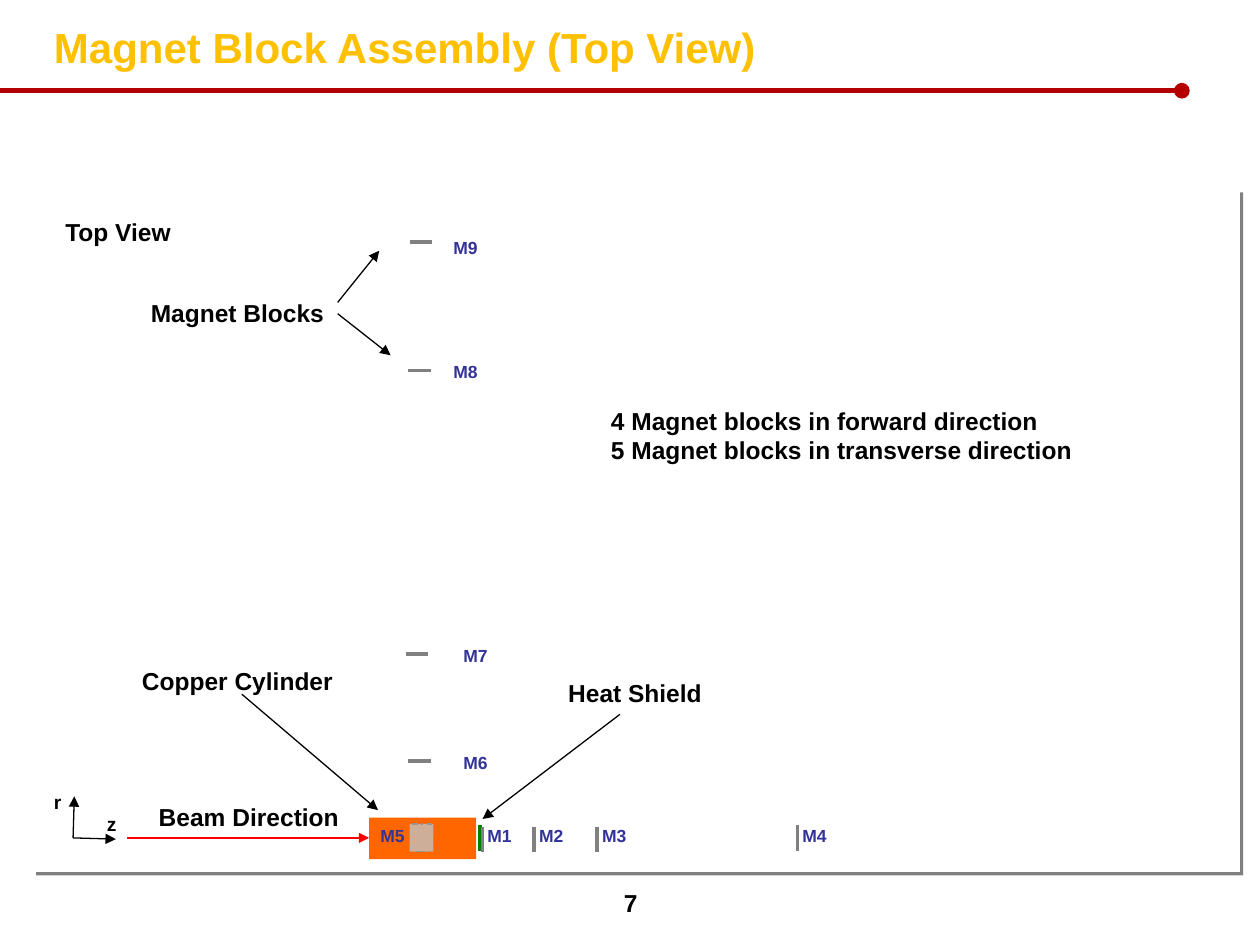
from dataclasses import dataclass

from lxml import etree
from pptx import Presentation
from pptx.dml.color import RGBColor
from pptx.enum.dml import MSO_LINE
from pptx.enum.shapes import MSO_CONNECTOR, MSO_SHAPE
from pptx.enum.text import MSO_ANCHOR, MSO_AUTO_SIZE, PP_ALIGN
from pptx.oxml.ns import qn
from pptx.util import Inches, Pt

STRAIGHT = MSO_CONNECTOR.STRAIGHT
RECTANGLE = MSO_SHAPE.RECTANGLE
DASH_DOT = MSO_LINE.DASH_DOT
MIDDLE, TOP = MSO_ANCHOR.MIDDLE, MSO_ANCHOR.TOP
FIT_SHAPE = MSO_AUTO_SIZE.SHAPE_TO_FIT_TEXT
LEFT, CENTER = PP_ALIGN.LEFT, PP_ALIGN.CENTER

FONT = "Arial"
COLORS = {
    "title": "FFC000", "rule": "B40000", "text": "000000", "label": "333399",
    "beam": "FF0000", "copper": "FF6600", "magnet": "808080",
    "shield": "008000", "block": "C0C0C0", "block_edge": "969696",
    "panel": "FFFFFF", "shadow": "808080",
}

# The page is a grid of 100 columns by 75 rows
COLUMNS, ROWS = 100, 75
CELL = Inches(10) // COLUMNS


@dataclass
class Box:
    """A region in grid units; its parts are placed from its corner."""
    left: float
    top: float
    width: float
    height: float

    def point(self, x, y):
        return round((self.left + x) * CELL), round((self.top + y) * CELL)

    def area(self, x, y, width, height):
        return (*self.point(x, y), round(width * CELL), round(height * CELL))


def color(name):
    return RGBColor.from_string(COLORS[name])


def add_line(page, box, start, end, name, weight=0.75, tail=None):
    line = page.shapes.add_connector(STRAIGHT, *box.point(*start), *box.point(*end))
    line.line.color.rgb = color(name)
    line.line.width = Pt(weight)
    if tail:
        etree.SubElement(line.line._get_or_add_ln(), qn("a:tailEnd"), type=tail)
    etree.SubElement(line._element.spPr, qn("a:effectLst"))


def add_text(page, box, place, lines, size=14, name="text", align=CENTER,
             wrap=True, anchor=TOP):
    frame = page.shapes.add_textbox(*box.area(*place)).text_frame
    frame.word_wrap = wrap
    frame.auto_size = FIT_SHAPE
    frame.vertical_anchor = anchor
    para = frame.paragraphs[0]
    para.alignment = align
    for number, line in enumerate(lines):
        if number:
            para.add_line_break()
        span = para.add_run()
        span.text = line
        span.font.name, span.font.size, span.font.bold = FONT, Pt(size), True
        span.font.color.rgb = color(name)


def add_rectangle(page, box, place, name):
    shape = page.shapes.add_shape(RECTANGLE, *box.area(*place))
    shape.shadow.inherit = False
    shape.fill.solid()
    shape.fill.fore_color.rgb = color(name)
    shape.line.fill.background()
    return shape


def add_header(page, box):
    add_line(page, box, (0, 7.2), (93.8, 7.2), "rule", 3, "oval")
    add_text(page, box, (3.3, 1.2, 58.2, 5), ["Magnet Block Assembly (Top View)"],
             24, "title", LEFT, wrap=False, anchor=MIDDLE)


def add_footer(page, box):
    add_text(page, box, (0, 0, box.width, box.height), ["7"])


def add_panel(page, box):
    panel = add_rectangle(page, box, (0, 0, box.width, box.height), "panel")
    effects = panel._element.spPr.find(qn("a:effectLst"))
    shadow = etree.SubElement(effects, qn("a:outerShdw"), dist=str(Pt(2.8)),
                              dir="2700000", algn="ctr", rotWithShape="0")
    etree.SubElement(shadow, qn("a:srgbClr"), val=COLORS["shadow"])


def add_target(page, box):
    """Copper cylinder with the M5 block inside, and the heat shield."""
    add_rectangle(page, box, (0, 0, 8.5, 3.3), "copper")
    block = add_rectangle(page, box, (3.2, 0.5, 1.9, 2.2), "block")
    tint = block._element.spPr.find(".//" + qn("a:srgbClr"))
    etree.SubElement(tint, qn("a:alpha"), val="80000")
    block.line.color.rgb = color("block_edge")
    block.line.width = Pt(0.75)
    block.line.dash_style = DASH_DOT
    add_line(page, box, (8.8, 0.6), (8.8, 2.6), "shield", 2)


def add_magnets(page, box):
    def add_label(text, x, y):
        add_text(page, box, (x, y, 3.9, 2.7), [text], 10, "label", LEFT, wrap=False)

    # Forward blocks: upright bars along the beam
    forward = [("M1", 35.7, 50.6), ("M2", 39.8, 50.6), ("M3", 44.8, 50.6),
               ("M4", 60.7, 50.5)]
    for text, x, y in forward:
        add_line(page, box, (x, y), (x, y + 2), "magnet", 2)
        add_label(text, x - 0.6, 50)

    # Transverse blocks: flat bars above the target
    transverse = [("M6", 29.8, 45.4, 33.2, 44.2), ("M7", 29.6, 36.9, 33.2, 35.7),
                  ("M8", 29.8, 14.4, 32.4, 13.2), ("M9", 29.9, 4.2, 32.4, 3.3)]
    for text, x, y, label_x, label_y in transverse:
        add_line(page, box, (x, y), (x + 1.8, y), "magnet", 2)
        add_label(text, label_x, label_y)
    add_label("M5", 26.6, 50)


def add_callouts(page, box):
    notes = [("Beam Direction", 8.4, 48.2, 17.5), ("Copper Cylinder", 7.5, 37.4, 17.5),
             ("Magnet Blocks", 7.5, 8.2, 17.5), ("Heat Shield", 40.7, 38.3, 14.2)]
    for text, x, y, width in notes:
        add_text(page, box, (x, y, width, 3.3), [text])
    add_text(page, box, (1.6, 1.7, 17.5, 3.3), ["Top View"], align=LEFT)
    add_text(page, box, (44.9, 16.7, 40.8, 5.7),
             ["4 Magnet blocks in forward direction",
              "5 Magnet blocks in transverse direction"], align=LEFT)

    arrows = [((16.6, 40.1), (27.4, 49.3)), ((24.2, 9.9), (28.4, 13.2)),
              ((24.2, 9), (27.5, 4.9)), ((46.6, 41.7), (35.7, 50))]
    for start, end in arrows:
        add_line(page, box, start, end, "text", tail="triangle")
    add_line(page, box, (7.5, 51.5), (26.7, 51.5), "beam", tail="triangle")


def add_axes(page, box):
    origin = (2.5, 4.3)
    axes = [("r", (2.6, 1), (0, 0)), ("z", (5.9, 4.4), (4.2, 1.8))]
    for text, tip, corner in axes:
        add_line(page, box, origin, tip, "text", tail="triangle")
        add_text(page, box, (*corner, 2.5, 2.8), [text], 11)


def main():
    deck = Presentation()
    deck.slide_width, deck.slide_height = COLUMNS * CELL, ROWS * CELL
    page = deck.slides.add_slide(deck.slide_layouts[6])
    panel = Box(2.6, 15, 95.8, 54.2)

    add_header(page, Box(0, 0, COLUMNS, 10))
    add_footer(page, Box(34.2, 70, 31.7, 3.5))
    add_panel(page, panel)
    add_target(page, Box(29.3, 64.9, 8.5, 3.3))
    add_magnets(page, panel)
    add_callouts(page, panel)
    add_axes(page, Box(3.3, 62.2, 6.7, 4.6))
    deck.save("out.pptx")


if __name__ == "__main__":
    main()
